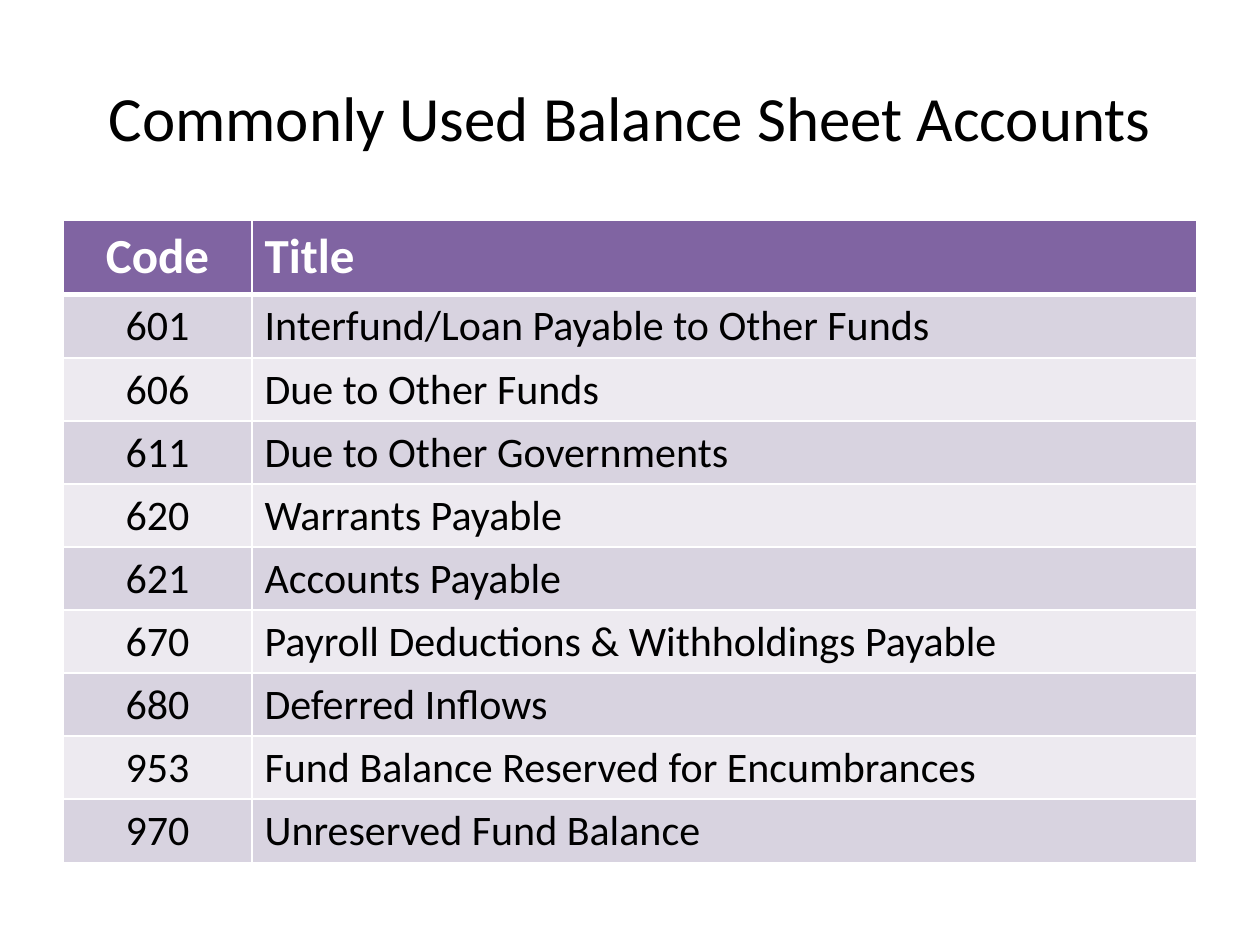
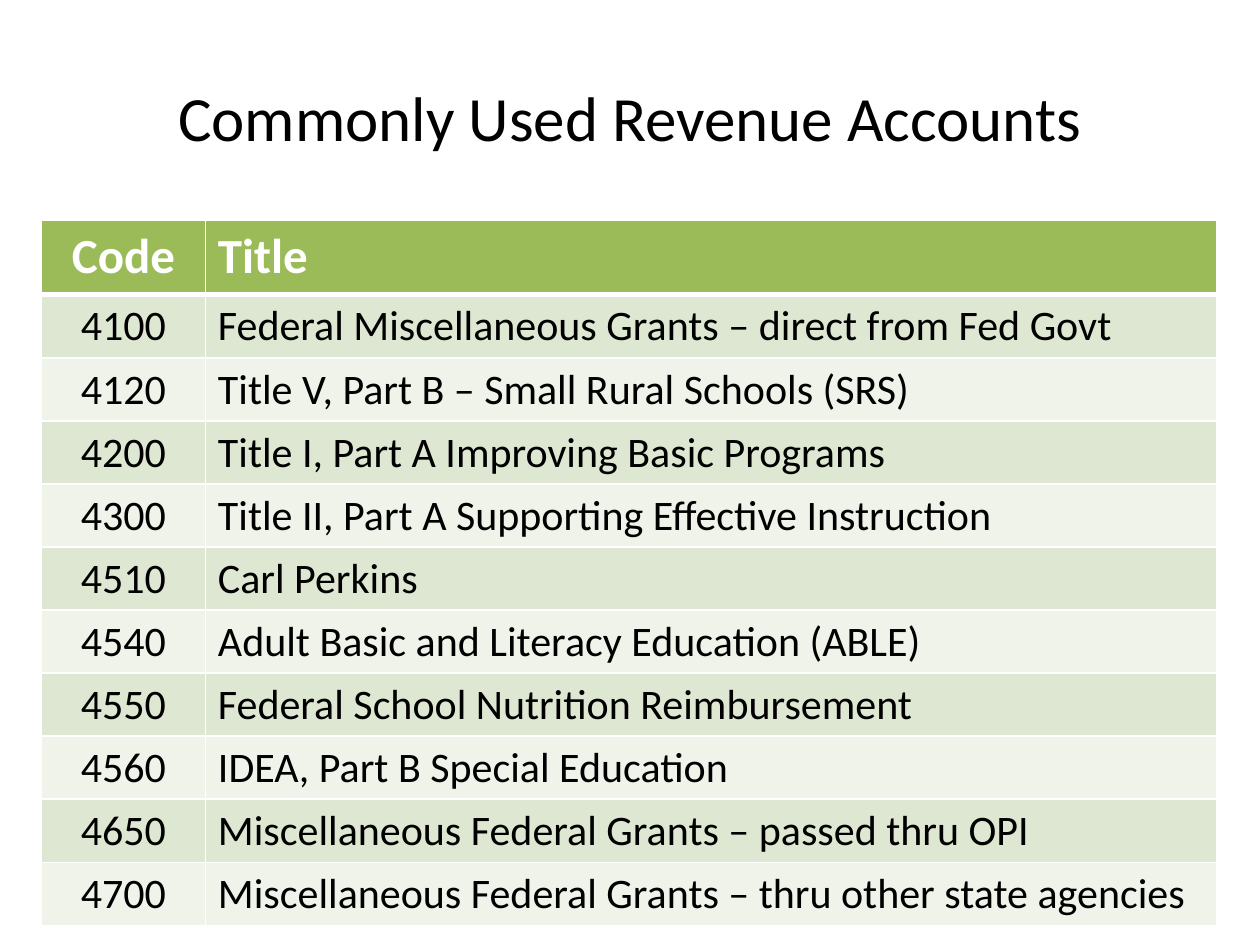
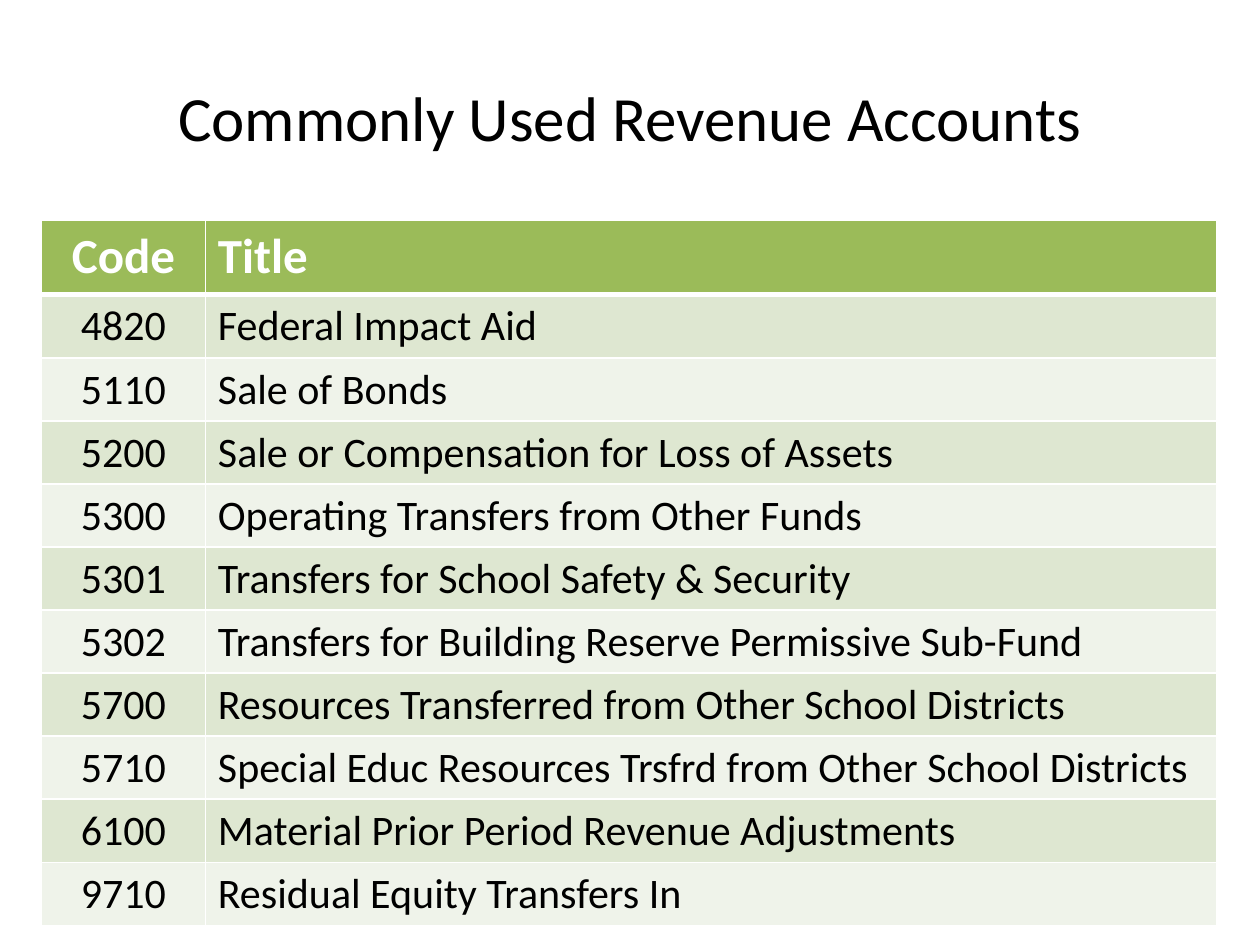
from lxml import etree
from pptx import Presentation
from pptx.dml.color import RGBColor
from pptx.enum.text import MSO_ANCHOR, PP_ALIGN
from pptx.oxml.ns import qn
from pptx.util import Inches, Pt

CENTER, LEFT = PP_ALIGN.CENTER, PP_ALIGN.LEFT
MIDDLE = MSO_ANCHOR.MIDDLE

FONT = "Calibri"
BLACK = RGBColor(0x00, 0x00, 0x00)
WHITE = RGBColor(0xFF, 0xFF, 0xFF)
PURPLE = RGBColor(0x80, 0x64, 0xA2)
PURPLE_MID = RGBColor(0xD8, 0xD3, 0xE0)
PURPLE_PALE = RGBColor(0xED, 0xEA, 0xF0)
GREEN = RGBColor(0x9B, 0xBB, 0x59)
GREEN_MID = RGBColor(0xDE, 0xE7, 0xD1)
GREEN_PALE = RGBColor(0xEF, 0xF3, 0xEA)

# Header fill, then the two alternating row fills
PURPLE_THEME = (PURPLE, PURPLE_MID, PURPLE_PALE)
GREEN_THEME = (GREEN, GREEN_MID, GREEN_PALE)

# Boxes are left, top, width in inches; tables grow down with their rows
TITLE_BOX = (0.5, 0.3, 9, 1.25)
BALANCE_BOX = (0.5, 1.75, 9)
REVENUE_BOX = (0.33, 1.75, 9.33)
BALANCE_CODE_WIDTH, REVENUE_CODE_WIDTH = 1.5, 1.3
HEADER_HEIGHT, ROW_HEIGHT = 0.59, 0.5
THIN, THICK = Pt(1), Pt(3)

HEADINGS = ("Code", "Title")
BALANCE_ACCOUNTS = [
    ("601", "Interfund/Loan Payable to Other Funds"),
    ("606", "Due to Other Funds"),
    ("611", "Due to Other Governments"),
    ("620", "Warrants Payable"),
    ("621", "Accounts Payable"),
    ("670", "Payroll Deductions & Withholdings Payable"),
    ("680", "Deferred Inflows"),
    ("953", "Fund Balance Reserved for Encumbrances"),
    ("970", "Unreserved Fund Balance"),
]
FEDERAL_ACCOUNTS = [
    ("4100", "Federal Miscellaneous Grants – direct from Fed Govt"),
    ("4120", "Title V, Part B – Small Rural Schools (SRS)"),
    ("4200", "Title I, Part A Improving Basic Programs"),
    ("4300", "Title II, Part A Supporting Effective Instruction"),
    ("4510", "Carl Perkins"),
    ("4540", "Adult Basic and Literacy Education (ABLE)"),
    ("4550", "Federal School Nutrition Reimbursement"),
    ("4560", "IDEA, Part B Special Education"),
    ("4650", "Miscellaneous Federal Grants – passed thru OPI"),
    ("4700", "Miscellaneous Federal Grants – thru other state agencies"),
]
OTHER_ACCOUNTS = [
    ("4820", "Federal Impact Aid"),
    ("5110", "Sale of Bonds"),
    ("5200", "Sale or Compensation for Loss of Assets"),
    ("5300", "Operating Transfers from Other Funds"),
    ("5301", "Transfers for School Safety & Security"),
    ("5302", "Transfers for Building Reserve Permissive Sub-Fund"),
    ("5700", "Resources Transferred from Other School Districts"),
    ("5710", "Special Educ Resources Trsfrd from Other School Districts"),
    ("6100", "Material Prior Period Revenue Adjustments"),
    ("9710", "Residual Equity Transfers In"),
]


def write_text(frame, text, size, color, align, bold=False):
    frame.text = text
    para = frame.paragraphs[0]
    para.alignment = align
    font = para.runs[0].font
    font.name, font.size, font.bold = FONT, Pt(size), bold
    font.color.rgb = color


def set_borders(cell, top, bottom):
    """Draw white rules round a cell; they must precede its fill in the XML."""
    properties = cell._tc.get_or_add_tcPr()
    widths = {"a:lnL": THIN, "a:lnR": THIN, "a:lnT": top, "a:lnB": bottom}
    for position, (tag, width) in enumerate(widths.items()):
        line = etree.Element(qn(tag), w=str(int(width)))
        fill = etree.SubElement(line, qn("a:solidFill"))
        etree.SubElement(fill, qn("a:srgbClr"), val=str(WHITE))
        properties.insert(position, line)


def add_title(page, box, text):
    frame = page.shapes.add_textbox(*map(Inches, box)).text_frame
    frame.word_wrap = True
    frame.vertical_anchor = MIDDLE
    write_text(frame, text, 36, BLACK, CENTER)


def add_account_table(page, box, code_width, theme, accounts):
    left, top, width = box
    height = HEADER_HEIGHT + ROW_HEIGHT * len(accounts)
    rows = [HEADINGS, *accounts]
    table = page.shapes.add_table(
        len(rows), len(HEADINGS), *map(Inches, (left, top, width, height))).table
    table.horz_banding = False
    table.columns[0].width = Inches(code_width)
    table.columns[1].width = Inches(width - code_width)

    header_fill, *band_fills = theme
    for row_index, texts in enumerate(rows):
        is_header = row_index == 0
        table.rows[row_index].height = Inches(HEADER_HEIGHT if is_header else ROW_HEIGHT)
        row_fill = header_fill if is_header else band_fills[(row_index - 1) % 2]
        size, color = (28, WHITE) if is_header else (24, BLACK)
        for column, (text, align) in enumerate(zip(texts, (CENTER, LEFT))):
            cell = table.cell(row_index, column)
            cell.fill.solid()
            cell.fill.fore_color.rgb = row_fill
            write_text(cell.text_frame, text, size, color, align, is_header)
            # The thick rule lies between the header and the first account
            set_borders(cell, THICK if row_index == 1 else THIN,
                        THICK if is_header else THIN)


def add_account_page(deck, title, box, code_width, theme, accounts):
    page = deck.slides.add_slide(deck.slide_layouts[6])
    add_title(page, TITLE_BOX, title)
    add_account_table(page, box, code_width, theme, accounts)


def main():
    deck = Presentation()
    deck.slide_width, deck.slide_height = Inches(10), Inches(7.5)
    add_account_page(deck, "Commonly Used Balance Sheet Accounts", BALANCE_BOX,
                     BALANCE_CODE_WIDTH, PURPLE_THEME, BALANCE_ACCOUNTS)
    for accounts in (FEDERAL_ACCOUNTS, OTHER_ACCOUNTS):
        add_account_page(deck, "Commonly Used Revenue Accounts", REVENUE_BOX,
                         REVENUE_CODE_WIDTH, GREEN_THEME, accounts)
    deck.save("out.pptx")


if __name__ == "__main__":
    main()
